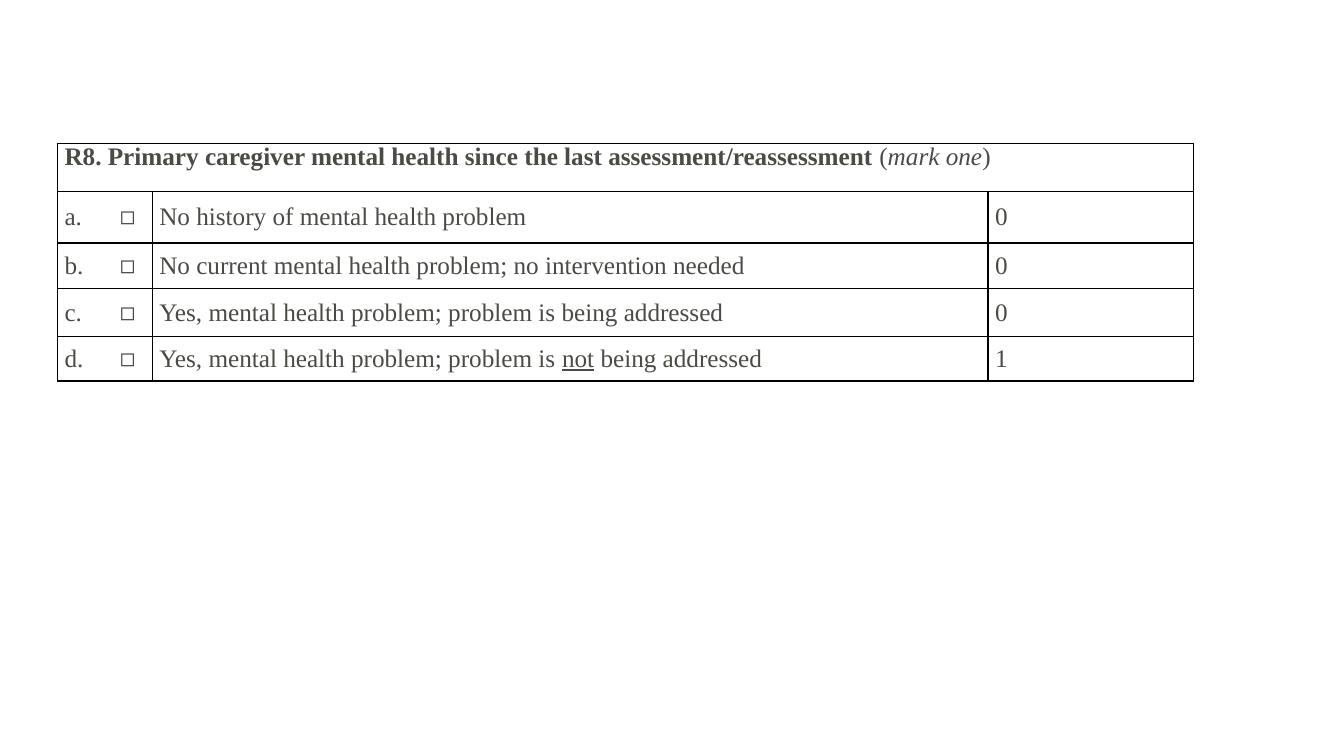
from typing import NamedTuple

from lxml import etree
from pptx import Presentation, util as u
from pptx.dml.color import RGBColor
from pptx.enum import text as t
from pptx.oxml import ns

INK, LINE = "484C45", "000000"
WIDTHS = (0.55, 0.39, 8.29, 2.04)
HEIGHTS = (0.48, 0.51, 0.45, 0.48, 0.44)


class Run(NamedTuple):
    words: str
    bold: bool | None = None
    italic: bool | None = None
    under: bool | None = None


class Choice(NamedTuple):
    label: str
    runs: tuple[Run, ...]
    score: str


TITLE = (
    Run("R8. Primary caregiver mental health since the last assessment/reassessment", bold=True),
    Run(" ("),
    Run("mark one", italic=True),
    Run(")"),
)
CHOICES = (
    Choice("a.", (Run("No history of mental health problem"),), "0"),
    Choice("b.", (Run("No current mental health problem; no intervention needed"),), "0"),
    Choice("c.", (Run("Yes, mental health problem; problem is being addressed"),), "0"),
    Choice("d.", (Run("Yes, mental health problem; problem is "), Run("not", under=True),
                  Run(" being addressed")), "1"),
)


def color(code: str) -> RGBColor:
    return RGBColor.from_string(code)


def border(cell, hidden: str = "") -> None:
    """Draw the four cell edges, leaving out the hidden ones."""
    props = cell._tc.get_or_add_tcPr()
    for side in "LRTB":
        edge = etree.SubElement(props, ns.qn(f"a:ln{side}"), w=str(u.Pt(1)))
        if side in hidden:
            etree.SubElement(edge, ns.qn("a:noFill"))
        else:
            fill = etree.SubElement(edge, ns.qn("a:solidFill"))
            etree.SubElement(fill, ns.qn("a:srgbClr"), val=LINE)


def write(cell, runs: tuple[Run, ...], anchor=t.MSO_ANCHOR.MIDDLE) -> None:
    cell.vertical_anchor = anchor
    para = cell.text_frame.paragraphs[0]
    para.alignment = t.PP_ALIGN.JUSTIFY
    para.font.name = "Times New Roman"
    para.font.size = u.Pt(18)
    para.font.color.rgb = color(INK)
    for part in runs:
        run = para.add_run()
        run.text = part.words
        run.font.bold = part.bold
        run.font.italic = part.italic
        run.font.underline = part.under


def main() -> None:
    deck = Presentation()
    deck.slide_width, deck.slide_height = u.Inches(13.33), u.Inches(7.5)
    slide = deck.slides.add_slide(deck.slide_layouts[6])

    # Table grid
    frame = slide.shapes.add_table(
        len(HEIGHTS), len(WIDTHS), u.Inches(0.57), u.Inches(1.42),
        u.Inches(sum(WIDTHS)), u.Inches(sum(HEIGHTS)))
    table = frame.table
    table.first_row = table.horz_banding = False
    for col, width in zip(table.columns, WIDTHS):
        col.width = u.Inches(width)
    for row, height in zip(table.rows, HEIGHTS):
        row.height = u.Inches(height)

    # Cell margins, edges and fill; label and box share one open cell
    open_sides = {0: "R", 1: "L"}
    for r, row in enumerate(table.rows):
        for c, cell in enumerate(row.cells):
            cell.margin_left = cell.margin_right = u.Inches(0.07)
            cell.margin_top = cell.margin_bottom = 0
            border(cell, open_sides.get(c, "") if r else "")
            cell.fill.background()

    # Heading
    head = table.cell(0, 0)
    head.merge(table.cell(0, len(WIDTHS) - 1))
    write(head, TITLE, t.MSO_ANCHOR.TOP)

    # Choices
    for r, item in enumerate(CHOICES, 1):
        parts = ((Run(item.label),), (Run("◻"),), item.runs, (Run(item.score),))
        for c, runs in enumerate(parts):
            write(table.cell(r, c), runs)

    deck.save("out.pptx")


if __name__ == "__main__":
    main()
